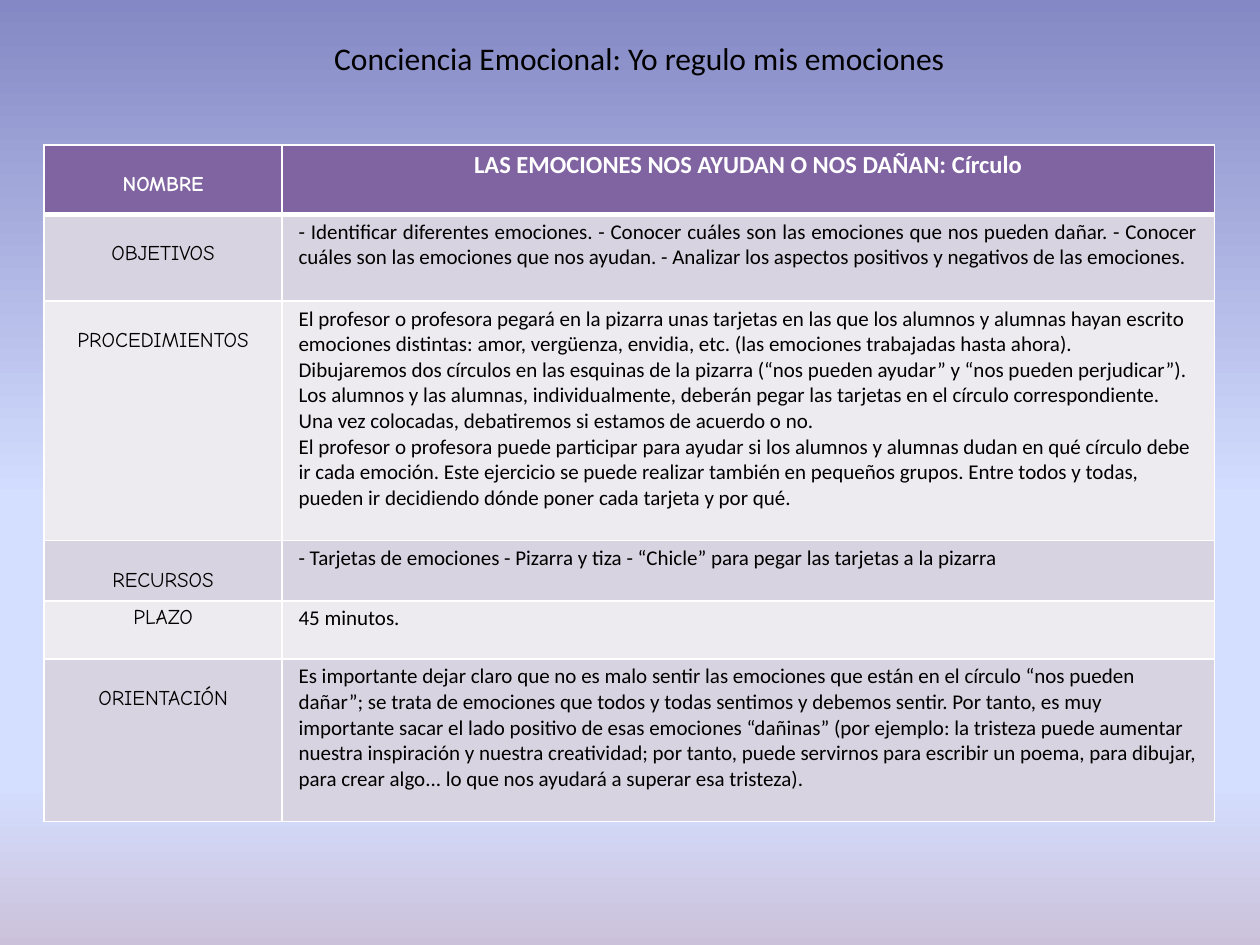
from dataclasses import dataclass

from lxml.etree import SubElement
from pptx import Presentation
from pptx.dml.color import RGBColor
from pptx.enum.text import MSO_ANCHOR, MSO_AUTO_SIZE, PP_ALIGN
from pptx.oxml import parse_xml
from pptx.oxml.ns import nsdecls, qn
from pptx.util import Inches, Pt


@dataclass(frozen=True)
class Theme:
    body_font: str = "Calibri"
    label_font: str = "Comic Neue"
    title_size: int = 18
    heading_size: int = 14
    text_size: int = 12
    ink: str = "000000"
    white: str = "FFFFFF"
    header: str = "8064A2"
    bands: tuple = ("EDEAF0", "D8D3E0")
    sky: tuple = ((0, "8488C4"), (53, "D4DEFF"), (83, "D4DEFF"), (100, "CCC1DA"))


def grid(units):
    """The slide is a grid of 100 columns by 75 rows, each 0.1 inch."""
    return Inches(units / 10)


class SlideBuilder:
    def __init__(self, deck, theme):
        self.theme = theme
        self.page = deck.slides.add_slide(deck.slide_layouts[5])

    def background(self):
        fill = self.page.background.fill
        fill.gradient()
        fill.gradient_angle = 270
        stops = self.page.element.find(".//" + qn("a:gsLst"))
        for stop in list(stops):
            stops.remove(stop)
        for percent, color in self.theme.sky:
            stop = SubElement(stops, qn("a:gs"), pos=str(percent * 1000))
            SubElement(stop, qn("a:srgbClr"), val=color)

    def format_text(self, para, font, size, color, bold=False, align=PP_ALIGN.LEFT):
        para.alignment = align
        for span in para.runs:
            span.font.name = font
            span.font.size = Pt(size)
            span.font.bold = bold
            span.font.color.rgb = RGBColor.from_string(color)

    def title(self, text, left, top, width, height):
        box = self.page.shapes.title
        box.left, box.top = grid(left), grid(top)
        box.width, box.height = grid(width), grid(height)
        frame = box.text_frame
        frame.text = text
        frame.word_wrap = True
        frame.auto_size = MSO_AUTO_SIZE.SHAPE_TO_FIT_TEXT
        frame.vertical_anchor = MSO_ANCHOR.TOP
        self.format_text(frame.paragraphs[0], self.theme.body_font,
                         self.theme.title_size, self.theme.ink, align=PP_ALIGN.CENTER)

    def borders(self, cell, bottom):
        properties = cell._tc.get_or_add_tcPr()
        widths = {"lnL": 1, "lnR": 1, "lnT": 1, "lnB": bottom}
        for place, (side, width) in enumerate(widths.items()):
            properties.insert(place, parse_xml(
                f'<a:{side} {nsdecls("a")} w="{Pt(width)}"><a:solidFill>'
                f'<a:srgbClr val="{self.theme.white}"/></a:solidFill></a:{side}>'))

    def cell(self, cell, text, fill, top_inset, bottom_border, **style):
        cell.margin_left = cell.margin_right = Inches(0.13)
        cell.margin_top, cell.margin_bottom = Inches(top_inset), Inches(0.04)
        cell.fill.solid()
        cell.fill.fore_color.rgb = RGBColor.from_string(fill)
        self.borders(cell, bottom_border)
        cell.text_frame.text = text
        for para in cell.text_frame.paragraphs:
            self.format_text(para, **style)

    def table(self, rows, left, top, widths):
        theme = self.theme
        heights = [row[0] for row in rows]
        table = self.page.shapes.add_table(
            len(rows), len(widths), grid(left), grid(top),
            grid(sum(widths)), grid(sum(heights))).table
        for column, width in zip(table.columns, widths):
            column.width = grid(width)
        for index, (height, label_inset, label, text, align) in enumerate(rows):
            table.rows[index].height = grid(height)
            head = index == 0
            fill = theme.header if head else theme.bands[index % 2]
            color = theme.white if head else theme.ink
            border = 3 if head else 1
            self.cell(table.cell(index, 0), label, fill, label_inset, border,
                      font=theme.label_font, size=theme.text_size, color=color,
                      bold=head, align=PP_ALIGN.CENTER)
            self.cell(table.cell(index, 1), text, fill, 0.04, border,
                      font=theme.body_font, color=color, bold=head, align=align,
                      size=theme.heading_size if head else theme.text_size)


# Row height, label top inset, label, text, text alignment
LOW, HIGH = 0.22, 0.04
ROWS = [
    (5.5, LOW, "NOMBRE", "LAS EMOCIONES NOS AYUDAN O NOS DAÑAN: Círculo", PP_ALIGN.CENTER),
    (6.9, LOW, "OBJETIVOS",
     "- Identificar diferentes emociones. - Conocer cuáles son las emociones que nos "
     "pueden dañar. - Conocer cuáles son las emociones que nos ayudan. - Analizar los "
     "aspectos positivos y negativos de las emociones.", PP_ALIGN.JUSTIFY),
    (19, LOW, "PROCEDIMIENTOS",
     "El profesor o profesora pegará en la pizarra unas tarjetas en las que los alumnos "
     "y alumnas hayan escrito emociones distintas: amor, vergüenza, envidia, etc. (las "
     "emociones trabajadas hasta ahora).\n"
     "Dibujaremos dos círculos en las esquinas de la pizarra (“nos pueden ayudar” y “nos "
     "pueden perjudicar”). Los alumnos y las alumnas, individualmente, deberán pegar las "
     "tarjetas en el círculo correspondiente. Una vez colocadas, debatiremos si estamos "
     "de acuerdo o no.\n"
     "El profesor o profesora puede participar para ayudar si los alumnos y alumnas dudan "
     "en qué círculo debe ir cada emoción. Este ejercicio se puede realizar también en "
     "pequeños grupos. Entre todos y todas, pueden ir decidiendo dónde poner cada tarjeta "
     "y por qué.", PP_ALIGN.LEFT),
    (4.8, LOW, "RECURSOS",
     "- Tarjetas de emociones - Pizarra y tiza - “Chicle” para pegar las tarjetas a la "
     "pizarra", PP_ALIGN.LEFT),
    (4.6, HIGH, "PLAZO", "45 minutos.", PP_ALIGN.LEFT),
    (12.9, LOW, "ORIENTACIÓN",
     "Es importante dejar claro que no es malo sentir las emociones que están en el "
     "círculo “nos pueden dañar”; se trata de emociones que todos y todas sentimos y "
     "debemos sentir. Por tanto, es muy importante sacar el lado positivo de esas "
     "emociones “dañinas” (por ejemplo: la tristeza puede aumentar nuestra inspiración y "
     "nuestra creatividad; por tanto, puede servirnos para escribir un poema, para "
     "dibujar, para crear algo... lo que nos ayudará a superar esa tristeza).",
     PP_ALIGN.LEFT),
]


def main():
    deck = Presentation()
    deck.slide_width, deck.slide_height = grid(100), grid(75)
    builder = SlideBuilder(deck, Theme())
    builder.background()
    # Activity sheet
    builder.table(ROWS, left=3.5, top=11.5, widths=(18.9, 74))
    # Heading
    builder.title("Conciencia Emocional: Yo regulo mis emociones", 23.2, 2.6, 55.1, 4)
    deck.save("out.pptx")


if __name__ == "__main__":
    main()
